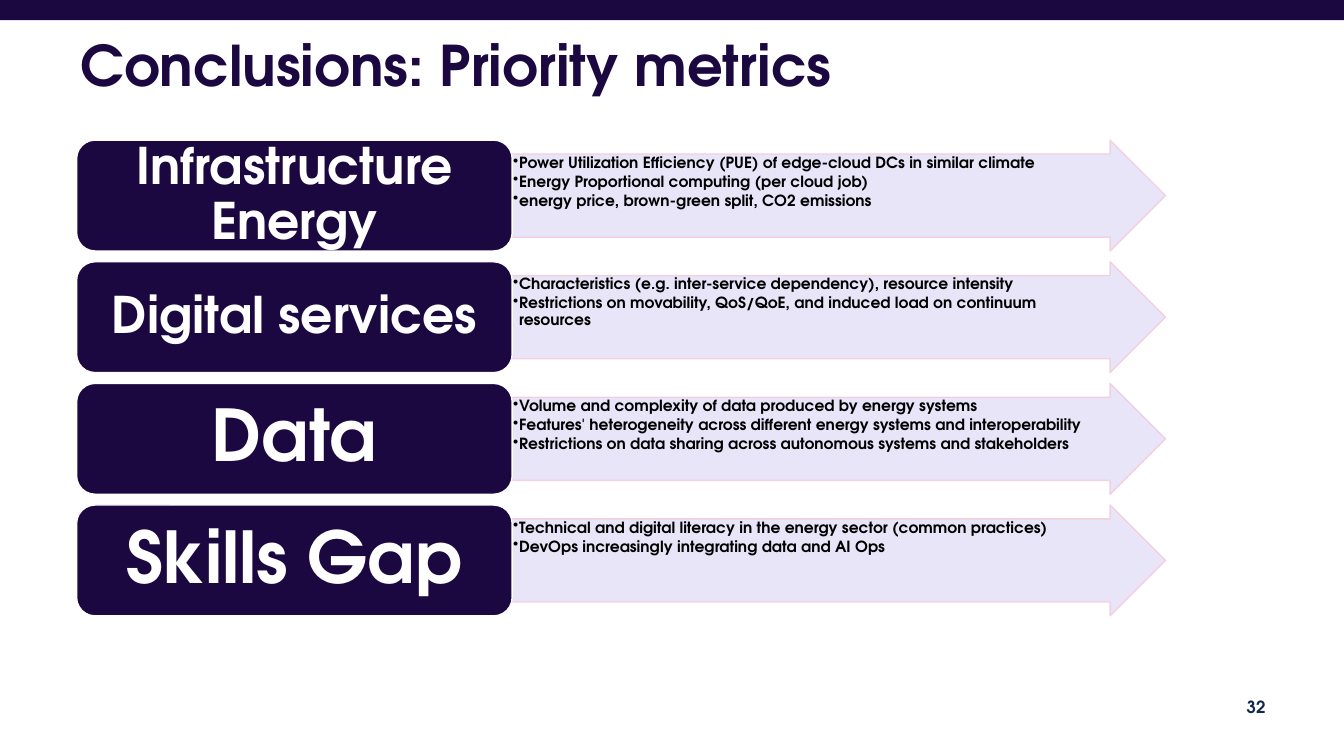
"""Build the slide that sums up the priority metrics."""
import pptx
import pptx.dml.color
import pptx.enum.shapes
import pptx.enum.text
import pptx.oxml
import pptx.oxml.ns
import pptx.util
from lxml import etree

RGBColor = pptx.dml.color.RGBColor
Inches = pptx.util.Inches
Pt = pptx.util.Pt
PP_ALIGN = pptx.enum.text.PP_ALIGN
MSO_ANCHOR = pptx.enum.text.MSO_ANCHOR
MSO_SHAPE = pptx.enum.shapes.MSO_SHAPE

NAVY = RGBColor(0x1C, 0x08, 0x40)
INK = RGBColor(0x11, 0x28, 0x4B)
LAVENDER = RGBColor(0xE7, 0xE3, 0xF9)
PINK = RGBColor(0xF4, 0xCD, 0xDC)
WHITE = RGBColor(0xFF, 0xFF, 0xFF)
BLACK = RGBColor(0x00, 0x00, 0x00)
FONT = "TeX Gyre Adventor"

SLIDE_WIDTH, SLIDE_HEIGHT = 13.33, 7.5
METRICS_BOX = (0.76, 1.39, 10.8, 4.72)
LABEL_SHARE = 0.4
ROW_GAP = 0.107
BULLET_INDENT = 0.06

METRICS = [
    ("Infrastructure Energy", 36, [
        "Power Utilization Efficiency (PUE) of edge-cloud DCs in similar climate",
        "Energy Proportional computing (per cloud job)",
        "energy price, brown-green split, CO2 emissions",
    ]),
    ("Digital services", 36, [
        "Characteristics (e.g. inter-service dependency), resource intensity",
        "Restrictions on movability, QoS/QoE, and induced load on continuum resources",
    ]),
    ("Data", 51, [
        "Volume and complexity of data produced by energy systems",
        "Features' heterogeneity across different energy systems and interoperability",
        "Restrictions on data sharing across autonomous systems and stakeholders",
    ]),
    ("Skills Gap", 51, [
        "Technical and digital literacy in the energy sector (common practices)",
        "DevOps increasingly integrating data and AI Ops",
    ]),
]


def style_paragraph(paragraph, size, color, alignment=PP_ALIGN.LEFT):
    """Give a paragraph the bold slide font, a size, a colour and an alignment."""
    paragraph.alignment = alignment
    paragraph.line_spacing = 0.9
    paragraph.font.name = FONT
    paragraph.font.size = Pt(size)
    paragraph.font.bold = True
    paragraph.font.color.rgb = color


def prepare_frame(shape, anchor, margins):
    """Set wrapping, anchor and left, top, right, bottom margins; return the frame."""
    frame = shape.text_frame
    frame.word_wrap = True
    frame.vertical_anchor = anchor
    (frame.margin_left, frame.margin_top,
     frame.margin_right, frame.margin_bottom) = map(Inches, margins)
    return frame


def add_text(slide, box, text, size, color, alignment=PP_ALIGN.LEFT):
    """Add a text box with one vertically centred paragraph."""
    shape = slide.shapes.add_textbox(*map(Inches, box))
    frame = prepare_frame(shape, MSO_ANCHOR.MIDDLE, (0.1, 0.05, 0.1, 0.05))
    frame.text = text
    style_paragraph(frame.paragraphs[0], size, color, alignment)


def add_filled_shape(slide, kind, box, fill, line=None):
    """Add a flat preset shape with a fill and an optional thin outline."""
    shape = slide.shapes.add_shape(kind, *map(Inches, box))
    shape.shadow.inherit = False
    shape.fill.solid()
    shape.fill.fore_color.rgb = fill
    if line is None:
        shape.line.fill.background()
    else:
        shape.line.color.rgb = line
        shape.line.width = Pt(1)
    return shape


def make_translucent(shape, percent):
    """Set the opacity of a shape's fill and outline."""
    properties = shape._element.spPr
    for color in properties.iter(pptx.oxml.ns.qn("a:srgbClr")):
        alpha = etree.SubElement(color, pptx.oxml.ns.qn("a:alpha"))
        alpha.set("val", str(percent * 1000))


def add_bullet(paragraph):
    """Give a paragraph a round bullet with a hanging indent."""
    properties = paragraph._p.get_or_add_pPr()
    properties.set("marL", str(Inches(BULLET_INDENT)))
    properties.set("indent", str(-Inches(BULLET_INDENT)))
    bullet = etree.SubElement(properties, pptx.oxml.ns.qn("a:buChar"))
    bullet.set("char", "•")


def add_arrow(slide, box, points):
    """Add a wide arrow that lists the metrics of one theme."""
    arrow = add_filled_shape(slide, MSO_SHAPE.RIGHT_ARROW, box, LAVENDER, PINK)
    arrow.adjustments[0] = 0.75
    arrow.adjustments[1] = 0.5
    make_translucent(arrow, 90)
    frame = prepare_frame(arrow, MSO_ANCHOR.TOP, (0.01, 0.01, 0.28, 0.01))
    for index, point in enumerate(points):
        paragraph = frame.paragraphs[0] if index == 0 else frame.add_paragraph()
        paragraph.text = point
        add_bullet(paragraph)
        paragraph.space_after = Pt(1.65)
        style_paragraph(paragraph, 11, BLACK)


def add_label(slide, box, text, size):
    """Add the rounded box that names one theme."""
    label = add_filled_shape(slide, MSO_SHAPE.ROUNDED_RECTANGLE, box, NAVY, WHITE)
    frame = prepare_frame(label, MSO_ANCHOR.MIDDLE, (0.15, 0.07, 0.15, 0.07))
    frame.text = text
    style_paragraph(frame.paragraphs[0], size, WHITE, PP_ALIGN.CENTER)


def add_metrics(slide, box):
    """Stack one label and arrow per theme in equal rows."""
    left, top, width, height = box
    row_height = (height - ROW_GAP * (len(METRICS) - 1)) / len(METRICS)
    label_width = width * LABEL_SHARE
    for index, (name, size, points) in enumerate(METRICS):
        row_top = top + index * (row_height + ROW_GAP)
        arrow_box = (left + label_width, row_top, width - label_width, row_height)
        add_arrow(slide, arrow_box, points)
        add_label(slide, (left, row_top, label_width, row_height), name, size)


def add_frame(slide, box):
    """Add the top band, the title and the page number."""
    left, top, width, height = box
    add_filled_shape(slide, MSO_SHAPE.RECTANGLE, (left, top, width, 0.2), NAVY)
    add_text(slide, (left + 0.7, top + 0.2, width - 0.7, 0.96),
             "Conclusions: Priority metrics", 40, NAVY)
    add_text(slide, (left + width - 3.68, top + height - 0.68, 3, 0.4),
             "32", 12, INK, PP_ALIGN.RIGHT)


def main():
    """Build and save the presentation."""
    presentation = pptx.Presentation()
    presentation.slide_width = Inches(SLIDE_WIDTH)
    presentation.slide_height = Inches(SLIDE_HEIGHT)
    slide = presentation.slides.add_slide(presentation.slide_layouts[6])
    add_frame(slide, (0, 0, SLIDE_WIDTH, SLIDE_HEIGHT))
    add_metrics(slide, METRICS_BOX)
    presentation.save("out.pptx")


if __name__ == "__main__":
    main()
